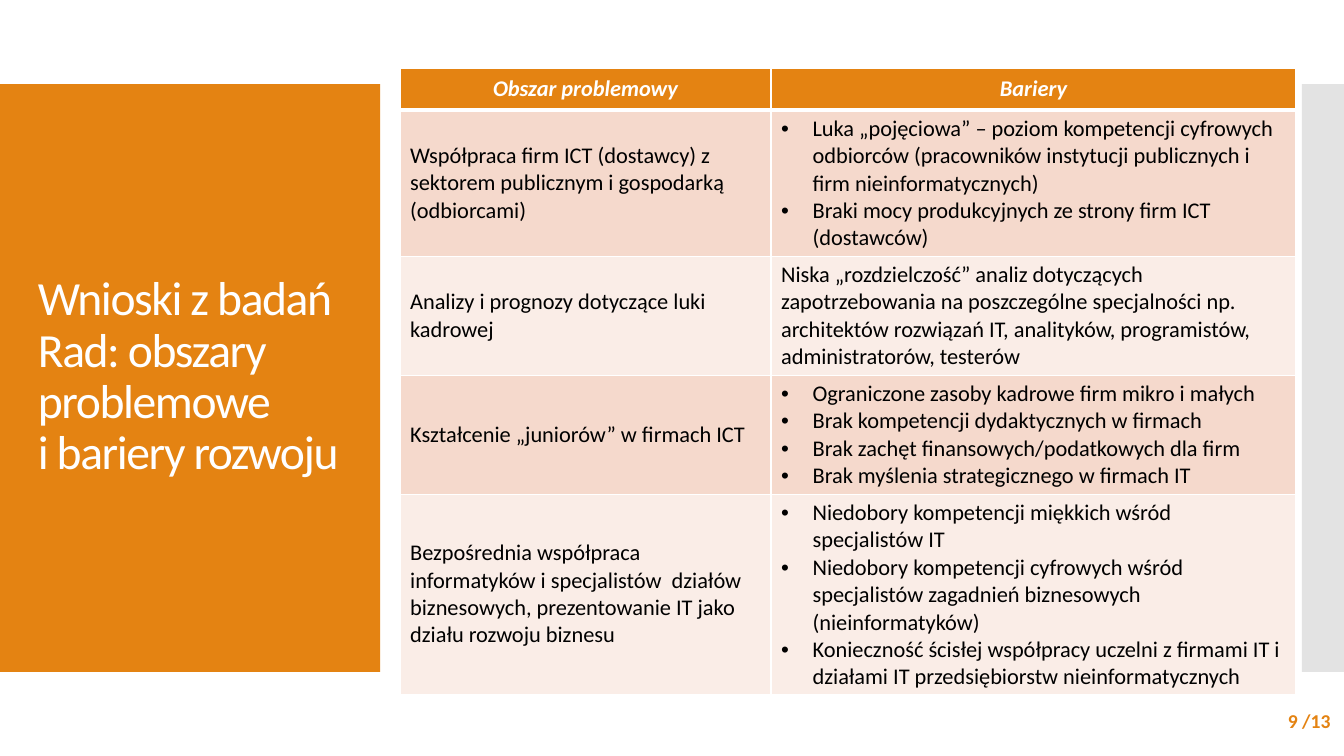
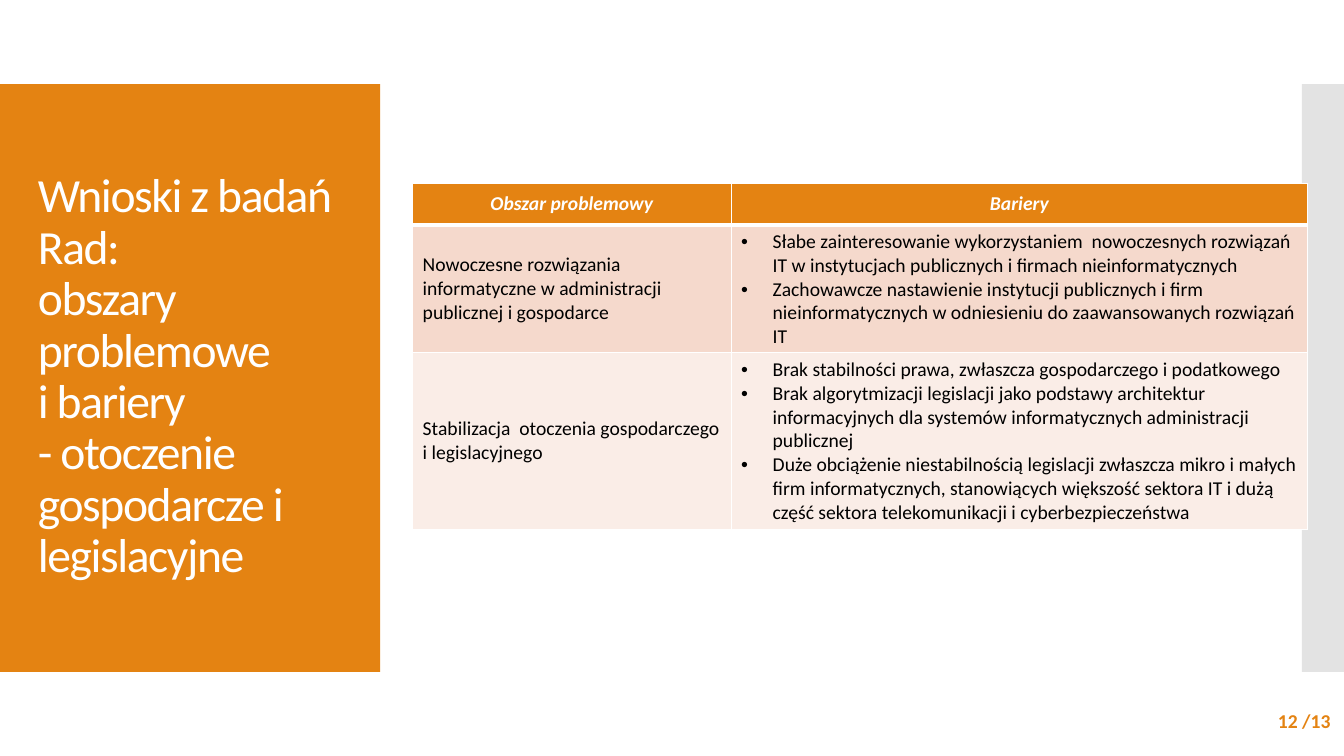
"""Build two slides on problem areas and development barriers."""
from lxml import etree
from pptx import Presentation
from pptx.dml.color import RGBColor
from pptx.enum.shapes import MSO_SHAPE
from pptx.enum.text import MSO_ANCHOR, PP_ALIGN
from pptx.oxml.ns import qn
from pptx.util import Pt

RECTANGLE = MSO_SHAPE.RECTANGLE
MIDDLE = MSO_ANCHOR.MIDDLE
LEFT, CENTER, RIGHT = PP_ALIGN.LEFT, PP_ALIGN.CENTER, PP_ALIGN.RIGHT

FONT = "Calibri"
COLORS = {
    "accent": "E48312",
    "side": "C8C8C8",
    "white": "FFFFFF",
    "black": "000000",
    "band_dark": "F5D9CC",
    "band_light": "FAEDE7",
}
SLIDE_WIDTH, SLIDE_HEIGHT = 960, 540
BAND_TOP, BAND_HEIGHT = 60, 420
TITLE_BAND_WIDTH, SIDE_BAND_WIDTH = 271.5, 30
TITLE_BOX = (20, 88.5, 232, 362)
NUMBER_BOX = (837.5, 500.5, 120, 29)
BULLET_INDENT = 22.5
HEADERS = ("Obszar problemowy", "Bariery")
SLIDE_COUNT = 13

SLIDES = [
    {
        "number": 9,
        "title": ["Wnioski z badań Rad: obszary problemowe", "i bariery rozwoju"],
        "table_at": (285.75, 49),
        "columns": (265, 375),
        "row_heights": (29.5, 104.5, 85, 85, 143),
        "size": 16,
        "rows": [
            ("Współpraca firm ICT (dostawcy) z sektorem publicznym i gospodarką (odbiorcami)",
             ["Luka „pojęciowa” – poziom kompetencji cyfrowych odbiorców "
              "(pracowników instytucji publicznych i firm nieinformatycznych)",
              "Braki mocy produkcyjnych ze strony firm ICT (dostawców)"]),
            ("Analizy i prognozy dotyczące luki kadrowej",
             "Niska „rozdzielczość” analiz dotyczących zapotrzebowania na poszczególne "
             "specjalności np. architektów rozwiązań IT, analityków, programistów, "
             "administratorów, testerów"),
            ("Kształcenie „juniorów” w firmach ICT",
             ["Ograniczone zasoby kadrowe firm mikro i małych",
              "Brak kompetencji dydaktycznych w firmach",
              "Brak zachęt finansowych/podatkowych dla firm",
              "Brak myślenia strategicznego w firmach IT"]),
            ("Bezpośrednia współpraca informatyków i specjalistów  działów biznesowych, "
             "prezentowanie IT jako działu rozwoju biznesu",
             ["Niedobory kompetencji miękkich wśród specjalistów IT",
              "Niedobory kompetencji cyfrowych wśród specjalistów zagadnień biznesowych "
              "(nieinformatyków)",
              "Konieczność ścisłej współpracy uczelni z firmami IT i działami IT "
              "przedsiębiorstw nieinformatycznych"]),
        ],
    },
    {
        "number": 12,
        "title": ["Wnioski z badań Rad:", "obszary problemowe", "i bariery",
                  "- otoczenie gospodarcze i legislacyjne"],
        "table_at": (294.75, 131),
        "columns": (227.5, 412),
        "row_heights": (29.5, 91.5, 126),
        "size": 14,
        "rows": [
            ("Nowoczesne rozwiązania informatyczne w administracji publicznej i gospodarce",
             ["Słabe zainteresowanie wykorzystaniem  nowoczesnych rozwiązań IT "
              "w instytucjach publicznych i firmach nieinformatycznych",
              "Zachowawcze nastawienie instytucji publicznych i firm nieinformatycznych "
              "w odniesieniu do zaawansowanych rozwiązań IT"]),
            ("Stabilizacja  otoczenia gospodarczego i legislacyjnego",
             ["Brak stabilności prawa, zwłaszcza gospodarczego i podatkowego",
              "Brak algorytmizacji legislacji jako podstawy architektur informacyjnych "
              "dla systemów informatycznych administracji publicznej",
              "Duże obciążenie niestabilnością legislacji zwłaszcza mikro i małych firm "
              "informatycznych, stanowiących większość sektora IT i dużą część sektora "
              "telekomunikacji i cyberbezpieczeństwa"]),
        ],
    },
]


def rgb(name):
    return RGBColor.from_string(COLORS[name])


def add_run(paragraph, text, size, color, bold=False, italic=False):
    run = paragraph.add_run()
    run.text = text
    font = run.font
    font.name, font.size, font.bold, font.italic = FONT, Pt(size), bold, italic
    font.color.rgb = rgb(color)
    return run


def add_band(slide, left, width, color, opacity=100):
    band = slide.shapes.add_shape(
        RECTANGLE, Pt(left), Pt(BAND_TOP), Pt(width), Pt(BAND_HEIGHT))
    band.shadow.inherit = False
    band.line.fill.background()
    band.fill.solid()
    band.fill.fore_color.rgb = rgb(color)
    if opacity < 100:
        fill_color = band.fill._xPr.find(".//" + qn("a:srgbClr"))
        etree.SubElement(fill_color, qn("a:alpha"), val=str(opacity * 1000))


def add_text_box(slide, box):
    frame = slide.shapes.add_textbox(*map(Pt, box)).text_frame
    frame.word_wrap = True
    frame.vertical_anchor = MIDDLE
    return frame.paragraphs[0]


def add_title(slide, lines):
    paragraph = add_text_box(slide, TITLE_BOX)
    paragraph.line_spacing = 0.9
    for index, line in enumerate(lines):
        if index:
            paragraph.add_line_break()
        run = add_run(paragraph, line, 34, "white")
        run.font._element.set("spc", "-100")


def add_page_number(slide, number):
    paragraph = add_text_box(slide, NUMBER_BOX)
    paragraph.alignment = RIGHT
    add_run(paragraph, f"{number} /{SLIDE_COUNT}", 14, "accent", bold=True)


def add_bullet(paragraph):
    properties = paragraph._p.get_or_add_pPr()
    properties.set("marL", str(Pt(BULLET_INDENT)))
    properties.set("indent", str(-Pt(BULLET_INDENT)))
    etree.SubElement(properties, qn("a:buFont"), typeface="Arial")
    etree.SubElement(properties, qn("a:buChar"), char="•")


def style_cell(cell, fill, top_width, bottom_width):
    cell.vertical_anchor = MIDDLE
    properties = cell._tc.get_or_add_tcPr()
    widths = {"lnL": 1, "lnR": 1, "lnT": top_width, "lnB": bottom_width}
    for side, width in widths.items():
        line = etree.SubElement(properties, qn(f"a:{side}"), w=str(Pt(width)))
        solid = etree.SubElement(line, qn("a:solidFill"))
        etree.SubElement(solid, qn("a:srgbClr"), val=COLORS["white"])
    cell.fill.solid()
    cell.fill.fore_color.rgb = rgb(fill)


def fill_cell(cell, content, size, header):
    bulleted = isinstance(content, list)
    frame = cell.text_frame
    for index, text in enumerate(content if bulleted else [content]):
        paragraph = frame.add_paragraph() if index else frame.paragraphs[0]
        paragraph.alignment = CENTER if header else LEFT
        if bulleted:
            add_bullet(paragraph)
        add_run(paragraph, text, size, "white" if header else "black", header, header)


def add_barrier_table(slide, data):
    rows = [HEADERS, *data["rows"]]
    columns, heights = data["columns"], data["row_heights"]
    table = slide.shapes.add_table(
        len(rows), len(columns), *map(Pt, data["table_at"]),
        Pt(sum(columns)), Pt(sum(heights))).table
    table.horz_banding = False
    for column, width in zip(table.columns, columns):
        column.width = Pt(width)
    for index, (row, height, contents) in enumerate(zip(table.rows, heights, rows)):
        row.height = Pt(height)
        header = index == 0
        fill = "accent" if header else ("band_light", "band_dark")[index % 2]
        for cell, content in zip(row.cells, contents):
            style_cell(cell, fill, 3 if index == 1 else 1, 3 if header else 1)
            fill_cell(cell, content, data["size"], header)


def main():
    presentation = Presentation()
    presentation.slide_width = Pt(SLIDE_WIDTH)
    presentation.slide_height = Pt(SLIDE_HEIGHT)
    blank_layout = presentation.slide_layouts[6]
    for data in SLIDES:
        slide = presentation.slides.add_slide(blank_layout)
        add_band(slide, 0, TITLE_BAND_WIDTH, "accent")
        add_band(slide, SLIDE_WIDTH - SIDE_BAND_WIDTH, SIDE_BAND_WIDTH, "side", opacity=50)
        add_title(slide, data["title"])
        add_barrier_table(slide, data)
        add_page_number(slide, data["number"])
    presentation.save("out.pptx")


if __name__ == "__main__":
    main()
